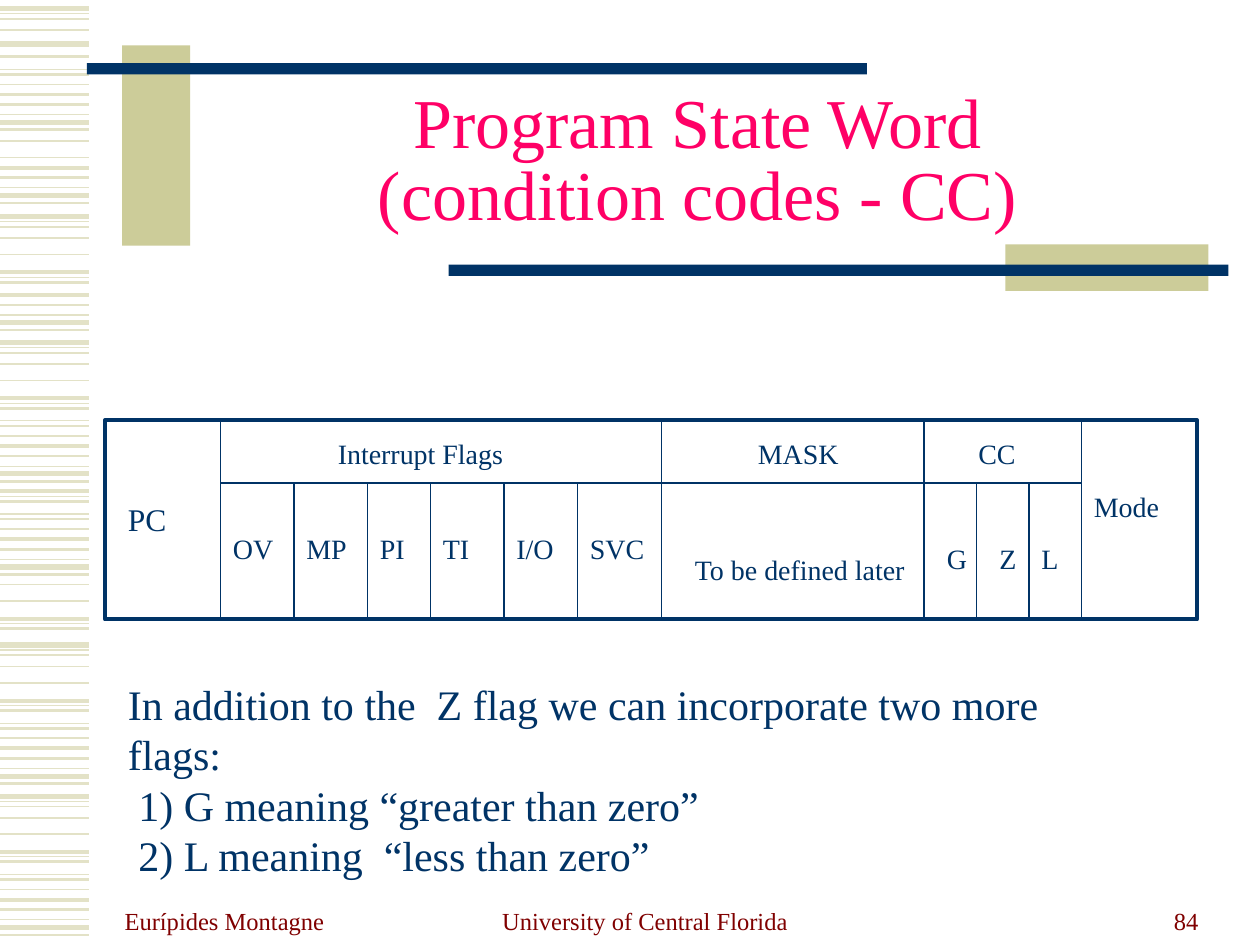
from dataclasses import dataclass

from lxml import etree
from pptx import Presentation
from pptx.dml.color import RGBColor
from pptx.enum.shapes import MSO_CONNECTOR, MSO_SHAPE
from pptx.enum.text import MSO_ANCHOR, MSO_AUTO_SIZE, PP_ALIGN
from pptx.oxml.ns import qn
from pptx.util import Inches, Pt

LINE, RECT = MSO_CONNECTOR.STRAIGHT, MSO_SHAPE.RECTANGLE
TOP, MIDDLE, BOTTOM = MSO_ANCHOR.TOP, MSO_ANCHOR.MIDDLE, MSO_ANCHOR.BOTTOM
LEFT, CENTER, RIGHT = PP_ALIGN.LEFT, PP_ALIGN.CENTER, PP_ALIGN.RIGHT
NO_FIT = MSO_AUTO_SIZE.NONE

FONT = "Times New Roman"
NAVY, TAN, PALE, PINK, MAROON, WHITE = (
    "003366", "CCCC99", "E3E2C7", "FF0066", "800000", "FFFFFF")
CELLS_PER_INCH = 12
STRIPE_WIDTH = 8.52

# Each stripe is (offset in inches, weight in points).
SHORT_MOTIF = [(-0.3, 1), (-0.22, 2.25), (-0.14, 1.5), (-0.06, 0.75),
               (0, 3), (0.06, 1.5)]
LONG_MOTIF = [(0, 3), (0.04, 0.75), (0.08, 1), (0.17, 1), (0.3, 1),
              (0.44, 2.25), (0.48, 0.75), (0.52, 1.5), (0.62, 0.75), (0.66, 1.5)]


@dataclass
class Band:
    motif: list[tuple[float, float]]
    y: float
    first: int = 0
    last: int = 10


@dataclass
class Block:
    x: float
    y: float
    w: float
    h: float
    fill: str
    line: str | None = None


@dataclass
class Label:
    x: float
    y: float
    w: float
    text: str
    size: float = 16
    h: float = 4.4
    color: str = NAVY
    align: PP_ALIGN = LEFT
    anchor: MSO_ANCHOR = TOP


BANDS = [
    *(Band(SHORT_MOTIF, y) for y in (0.97, 1.55, 3.76, 4.5, 6.16, 7.36)),
    Band(SHORT_MOTIF, 2.56, 1),
    *(Band(LONG_MOTIF, y) for y in (2.72, 5.12, 6.32)),
    Band(LONG_MOTIF, 0.07, 0, 4),
    Band(LONG_MOTIF, -0.07, 7),
    Band([(0, 3)], 0.35),
    Band(LONG_MOTIF, 0.82, 4, 5),
    Band(LONG_MOTIF, 1.72, 0, 8),
    Band(LONG_MOTIF, 3.46, 5),
    Band(LONG_MOTIF, 4.47, 3, 8),
]
DECOR = [
    Block(11.64, 4.32, 6.48, 19.08, TAN),
    Block(8.28, 6, 74.28, 1.08, NAVY),
    Block(95.76, 23.28, 19.32, 4.44, TAN),
    Block(42.72, 25.2, 74.28, 1.08, NAVY),
]
WORD_TOP, WORD_SPLIT, WORD_BOTTOM = 40, 46, 59
FIELD_EDGES = (21, 63, 88, 103)
FLAG_EDGES = (28, 35, 41, 48, 55, 93, 98)
INTERRUPTS = zip((21, *FLAG_EDGES[:5]), ("OV", "MP", "PI", "TI", "I/O", "SVC"))
CONDITIONS = ((89, "G"), (94, "Z"), (98, "L"))
LABELS = [
    Label(11, 47, 8, "PC", 18, 4.8),
    Label(31, 41, 23, "Interrupt Flags"),
    Label(71, 41, 13, "MASK"),
    Label(92, 41, 8, "CC"),
    Label(103, 46, 12, "Mode"),
    *(Label(x, 50, 9, name) for x, name in INTERRUPTS),
    Label(65, 52, 28, "To be defined later"),
    *(Label(x, 51, 4, name) for x, name in CONDITIONS),
    Label(11, 64, 95, "In addition to the  Z flag we can incorporate two more flags:\n"
          " 1) G meaning “greater than zero”\n"
          " 2) L meaning  “less than zero”", 24, 20),
    Label(10.68, 83.64, 24.96, "Eurípides Montagne", 14, 6, MAROON, LEFT, BOTTOM),
    Label(41.16, 83.64, 40.56, "University of Central Florida", 14, 6, MAROON,
          CENTER, BOTTOM),
    Label(86.52, 83.64, 28.8, "84", 14, 6, MAROON, RIGHT, BOTTOM),
]


def cell(n: float) -> int:
    return Inches(n / CELLS_PER_INCH)


def rgb(color: str) -> RGBColor:
    return RGBColor.from_string(color)


def add_line(s, x1: float, y1: float, x2: float, y2: float,
             color: str = NAVY, weight: float = 0.75) -> None:
    c = s.shapes.add_connector(LINE, cell(x1), cell(y1), cell(x2), cell(y2))
    c.line.color.rgb = rgb(color)
    c.line.width = Pt(weight)
    etree.SubElement(c._element.spPr, qn("a:effectLst"))


def add_band(s, band: Band) -> None:
    for offset, weight in band.motif[band.first:band.last]:
        y = (band.y + offset) * CELLS_PER_INCH
        add_line(s, 0, y, STRIPE_WIDTH, y, PALE, weight)


def add_block(s, b: Block) -> None:
    sp = s.shapes.add_shape(RECT, cell(b.x), cell(b.y), cell(b.w), cell(b.h))
    sp.shadow.inherit = False
    sp.fill.solid()
    sp.fill.fore_color.rgb = rgb(b.fill)
    if b.line:
        sp.line.color.rgb = rgb(b.line)
        sp.line.width = Pt(2.25)
    else:
        sp.line.fill.background()


def write(sp, label: Label) -> None:
    tf = sp.text_frame
    tf.text = label.text
    tf.word_wrap = True
    tf.auto_size = NO_FIT
    tf.vertical_anchor = label.anchor
    for p in tf.paragraphs:
        p.alignment = label.align
        p.font.name = FONT
        p.font.size = Pt(label.size)
        p.font.color.rgb = rgb(label.color)


def add_label(s, label: Label) -> None:
    write(s.shapes.add_textbox(cell(label.x), cell(label.y),
                               cell(label.w), cell(label.h)), label)


def set_title(s, label: Label) -> None:
    sp = s.shapes.title
    sp.left, sp.top = cell(label.x), cell(label.y)
    sp.width, sp.height = cell(label.w), cell(label.h)
    write(sp, label)
    sp.text_frame.paragraphs[0].line_spacing = 0.85


def main() -> None:
    prs = Presentation()
    prs.slide_width, prs.slide_height = Inches(10), Inches(7.5)
    s = prs.slides.add_slide(prs.slide_layouts[5])
    set_title(s, Label(18, 8.04, 96.84, "Program State Word\v(condition codes - CC)",
                       40, 15, PINK, CENTER, MIDDLE))
    for band in BANDS:
        add_band(s, band)
    for block in DECOR:
        add_block(s, block)
    add_block(s, Block(10, WORD_TOP, 104, WORD_BOTTOM - WORD_TOP, WHITE, NAVY))
    for x in FIELD_EDGES:
        add_line(s, x, WORD_TOP, x, WORD_BOTTOM)
    add_line(s, FIELD_EDGES[0], WORD_SPLIT, FIELD_EDGES[-1], WORD_SPLIT)
    for x in FLAG_EDGES:
        add_line(s, x, WORD_SPLIT, x, WORD_BOTTOM)
    for label in LABELS:
        add_label(s, label)
    prs.save("out.pptx")


if __name__ == "__main__":
    main()
